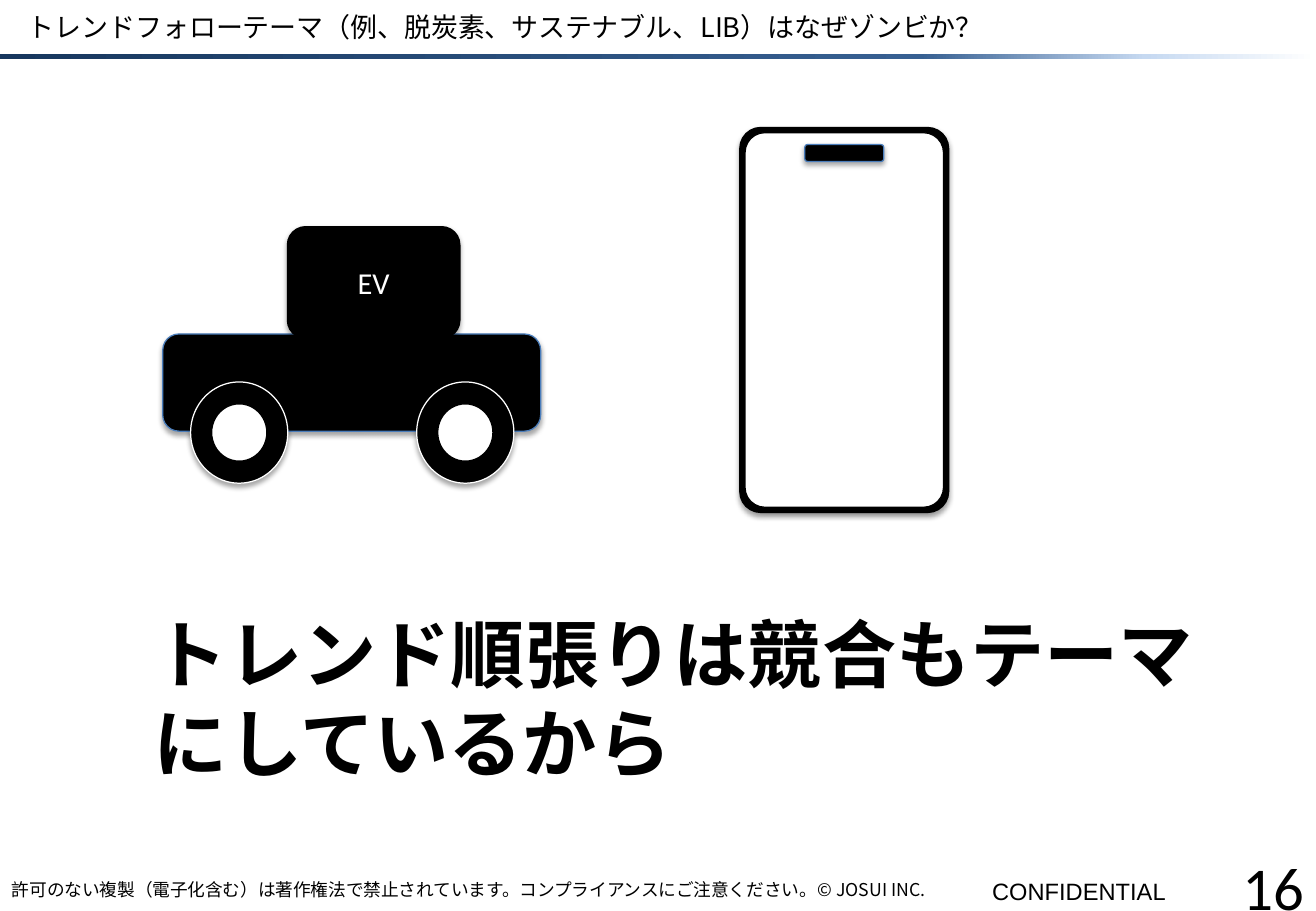
from dataclasses import dataclass

from lxml.etree import SubElement
from pptx import Presentation
from pptx.dml.color import RGBColor
from pptx.enum.shapes import MSO_SHAPE
from pptx.enum.text import MSO_ANCHOR, MSO_AUTO_SIZE, PP_ALIGN
from pptx.oxml import parse_xml
from pptx.oxml.ns import nsdecls, qn
from pptx.util import Pt


@dataclass(frozen=True)
class Theme:
    black: str = "000000"
    white: str = "FFFFFF"
    outline: str = "4B7EBC"
    rule_stops: tuple = ((0, "17375E"), (70, "376092"), (87, "C6D9F1"), (100, "FFFFFF"))
    japanese: str = "Noto Sans CJK JP"
    latin: str = "Calibri"
    label: str = "Arial"
    title_size: float = 16
    message_size: float = 44
    notice_size: float = 10.5
    label_size: float = 14
    number_size: float = 36
    car_size: float = 18


THEME = Theme()


def style_text(shape, text, size, font, color=THEME.black, bold=False,
               align=PP_ALIGN.LEFT, anchor=MSO_ANCHOR.MIDDLE):
    frame = shape.text_frame
    frame.text = text
    frame.word_wrap = True
    frame.vertical_anchor = anchor
    para = frame.paragraphs[0]
    para.alignment = align
    span = para.runs[0]
    span.font.size = Pt(size)
    span.font.bold = bold
    span.font.color.rgb = RGBColor.from_string(color)
    span.font.name = font
    east_asian = SubElement(span.font._element, qn("a:ea"))
    east_asian.set("typeface", THEME.japanese)


def add_text(page, box, text, size, font, **style):
    shape = page.shapes.add_textbox(*map(Pt, box))
    style_text(shape, text, size, font, **style)
    return shape


def add_shadow(shape):
    shape._element.spPr.append(parse_xml(
        f'<a:effectLst {nsdecls("a")}>'
        f'<a:outerShdw blurRad="{Pt(3.1)}" dist="{Pt(1.8)}" dir="5400000" rotWithShape="0">'
        f'<a:srgbClr val="{THEME.black}"><a:alpha val="35000"/></a:srgbClr>'
        '</a:outerShdw></a:effectLst>'))


def add_part(page, kind, box, fill, line=None, width=0.75, corner=None, shadow=True):
    shape = page.shapes.add_shape(kind, *map(Pt, box))
    shape.fill.solid()
    shape.fill.fore_color.rgb = RGBColor.from_string(fill)
    if line:
        shape.line.color.rgb = RGBColor.from_string(line)
        shape.line.width = Pt(width)
    else:
        shape.line.fill.background()
    if corner is not None:
        shape.adjustments[0] = corner
    if shadow:
        add_shadow(shape)
    else:
        shape.shadow.inherit = False
    return shape


def draw_header(page, box, title):
    left, top, width, height = box
    rule = add_part(page, MSO_SHAPE.RECTANGLE, (left, top + height - 3, width, 3),
                    THEME.white, shadow=False)
    stops = "".join(f'<a:gs pos="{place * 1000}"><a:srgbClr val="{color}"/></a:gs>'
                    for place, color in THEME.rule_stops)
    solid = rule._element.spPr.find(qn("a:solidFill"))
    rule._element.spPr.replace(solid, parse_xml(
        f'<a:gradFill {nsdecls("a")}><a:gsLst>{stops}</a:gsLst><a:lin ang="0"/></a:gradFill>'))
    add_text(page, (left + 9.4, top, 665, 31.7), title, THEME.title_size, THEME.japanese)


def draw_footer(page, box, notice, label, number):
    left, top, width, height = box
    mark = add_text(page, (left + 581, top + 3.5, 121, 24.5), label,
                    THEME.label_size, THEME.label, anchor=MSO_ANCHOR.TOP)
    mark.text_frame.word_wrap = False
    add_text(page, (left, top + 2, 702, 25), notice, THEME.notice_size, THEME.japanese)
    add_text(page, (left + width - 98.6, top, 98.6, 25), number,
             THEME.number_size, THEME.latin, align=PP_ALIGN.RIGHT)


def draw_car(page, box):
    left, top, width, height = box
    add_part(page, MSO_SHAPE.ROUNDED_RECTANGLE, (left, top + 64, width, 57.6),
             THEME.black, THEME.outline)
    cabin = add_part(page, MSO_SHAPE.ROUNDED_RECTANGLE, (left + 73.5, top, 103, 67), THEME.black)
    style_text(cabin, "EV", THEME.car_size, THEME.latin, color=THEME.white,
               align=PP_ALIGN.CENTER)
    tire_width, tire_height, hub_width, hub_height = 57.6, 60, 34, 35.2
    tire_top = top + height - tire_height
    for offset in (16.5, 150.5):
        add_part(page, MSO_SHAPE.DONUT, (left + offset, tire_top, tire_width, tire_height),
                 THEME.black, THEME.white)
        add_part(page, MSO_SHAPE.OVAL,
                 (left + offset + (tire_width - hub_width) / 2,
                  tire_top + (tire_height - hub_height) / 2, hub_width, hub_height),
                 THEME.white, THEME.black, width=2, shadow=False)


def draw_phone(page, box):
    left, top, width, height = box
    bezel, notch_width = 3.1, 46.8
    add_part(page, MSO_SHAPE.ROUNDED_RECTANGLE, box, THEME.black, THEME.black, corner=0.1)
    add_part(page, MSO_SHAPE.ROUNDED_RECTANGLE,
             (left + bezel, top + bezel, width - 2 * bezel, height - 2 * bezel),
             THEME.white, THEME.black, corner=0.1)
    add_part(page, MSO_SHAPE.ROUNDED_RECTANGLE,
             (left + (width - notch_width) / 2, top + 10.1, notch_width, 10),
             THEME.black, THEME.outline)


def draw_message(page, box, text):
    message = add_text(page, box, text, THEME.message_size, THEME.latin,
                       bold=True, anchor=MSO_ANCHOR.TOP)
    message.text_frame.auto_size = MSO_AUTO_SIZE.SHAPE_TO_FIT_TEXT


def main():
    deck = Presentation()
    deck.slide_width, deck.slide_height = Pt(780), Pt(540)
    page = deck.slides.add_slide(deck.slide_layouts[6])
    draw_header(page, (0, 0, 780, 35.2),
                "トレンドフォローテーマ（例、脱炭素、サステナブル、LIB）はなぜゾンビか？")
    draw_footer(page, (0, 512.8, 780, 27.2),
                "許可のない複製（電子化含む）は著作権法で禁止されています。"
                "コンプライアンスにご注意ください。© JOSUI INC.",
                "CONFIDENTIAL", "16")
    draw_message(page, (84.2, 357, 646.6, 113.8),
                 "トレンド順張りは競合もテーマにしているから")
    draw_car(page, (96.5, 134, 224, 152.4))
    draw_phone(page, (438.5, 75.6, 123.8, 228.2))
    deck.save("out.pptx")


if __name__ == "__main__":
    main()
